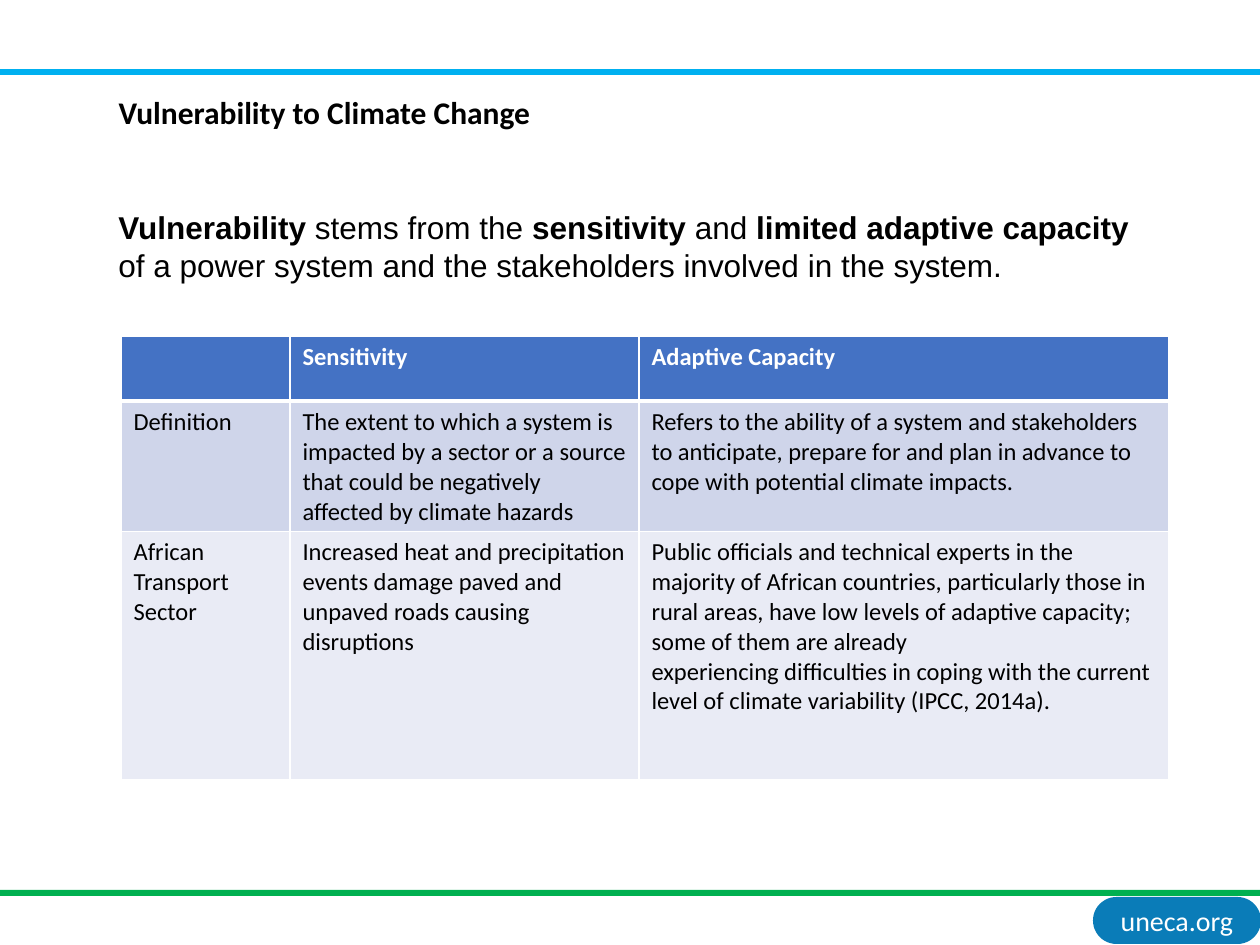
"""Build a slide on vulnerability to climate change with a definition table."""
import pptx
import pptx.util
import pptx.dml.color
import pptx.enum.shapes
import pptx.enum.text
import pptx.oxml

PX = 914400 / 126
COLORS = {
    "sky": "00B0F0", "green": "00B050", "badge": "0A7CB8", "white": "FFFFFF",
    "black": "000000", "header": "4472C4", "band_dark": "CFD5EA", "band_light": "E9EBF5",
}
ANCHOR = pptx.enum.text.MSO_ANCHOR
ALIGN = pptx.enum.text.PP_ALIGN
SHAPE = pptx.enum.shapes.MSO_SHAPE
NS = 'xmlns:a="http://schemas.openxmlformats.org/drawingml/2006/main"'


def px(*values):
    return [pptx.util.Emu(round(v * PX)) for v in values]


def add_text(p, text, color, **formats):
    r = p.add_run()
    r.text = text
    r.font.color.rgb = pptx.dml.color.RGBColor.from_string(COLORS[color])
    for name, value in formats.items():
        setattr(r.font, name, value)


prs = pptx.Presentation()
prs.slide_width, prs.slide_height = px(1260, 945)
s = prs.slides.add_slide(prs.slide_layouts[5])

bars = [
    (SHAPE.ROUNDED_RECTANGLE, (1093, 897, 168, 47), "badge"),
    (SHAPE.RECTANGLE, (0, 69, 1260, 6), "sky"),
    (SHAPE.RECTANGLE, (0, 890, 1260, 6), "green"),
]
for kind, box, color in bars:
    sp = s.shapes.add_shape(kind, *px(*box))
    sp.shadow.inherit = False
    sp.fill.solid()
    sp.fill.fore_color.rgb = pptx.dml.color.RGBColor.from_string(COLORS[color])
    sp.line.fill.background()
    if color == "badge":
        sp.adjustments[0] = 0.5
        tf = sp.text_frame
        margins = px(6)[0]
        for side in ("left", "top", "right", "bottom"):
            setattr(tf, f"margin_{side}", margins)
        tf.word_wrap = False
        tf.vertical_anchor = ANCHOR.MIDDLE
        tf.paragraphs[0].alignment = ALIGN.CENTER
        add_text(tf.paragraphs[0], "uneca.org", "white", name="Calibri", size=pptx.util.Pt(16))

title = s.shapes.title
title.left, title.top, title.width, title.height = px(106, 87, 440, 50)
tf = title.text_frame
tf_formats = {"word_wrap": False, "vertical_anchor": ANCHOR.TOP,
              "auto_size": pptx.enum.text.MSO_AUTO_SIZE.NONE}
for name, value in tf_formats.items():
    setattr(tf, name, value)
p = tf.paragraphs[0]
p.alignment = ALIGN.LEFT
add_text(p, "Vulnerability to Climate Change", "black",
         name="Calibri", size=pptx.util.Pt(18), bold=True)

tf = s.shapes.add_textbox(*px(106, 202, 1048, 89)).text_frame
tf.word_wrap = True
statement = [
    ("Vulnerability", True), (" stems from the ", False),
    ("sensitivity", True), (" and ", False),
    ("limited adaptive capacity ", True),
    ("of a power system and the stakeholders involved in the system.", False),
]
for text, bold in statement:
    add_text(tf.paragraphs[0], text, "black", name="Arial", size=pptx.util.Pt(18), bold=bold)

rows = [
    ["", "Sensitivity", "Adaptive Capacity"],
    ["Definition",
     "The extent to which a system is impacted by a sector or a source "
     "that could be negatively affected by climate hazards",
     "Refers to the ability of a system and stakeholders to anticipate, prepare for "
     "and plan in advance to cope with potential climate impacts."],
    ["African Transport Sector",
     "Increased heat and precipitation events damage paved and unpaved roads causing disruptions",
     "Public officials and technical experts in the majority of African countries, "
     "particularly those in rural areas, have low levels of adaptive capacity; "
     "some of them are already\n"
     "experiencing difficulties in coping with the current level of climate variability "
     "(IPCC, 2014a)."],
]
row_heights = px(65, 130, 248)
col_widths = px(169, 349, 530)
row_fills = ["header", "band_dark", "band_light"]
table = s.shapes.add_table(3, 3, *px(121, 336, 1048, 443)).table
for col, width in zip(table.columns, col_widths):
    col.width = width
for i, texts in enumerate(rows):
    table.rows[i].height = row_heights[i]
    for j, text in enumerate(texts):
        cell = table.cell(i, j)
        for k, line in enumerate(text.split("\n") if text else []):
            p = cell.text_frame.paragraphs[0] if k == 0 else cell.text_frame.add_paragraph()
            add_text(p, line, "black" if i else "white",
                     name="Calibri", size=pptx.util.Pt(14), bold=i == 0)
        tc_pr = cell._tc.get_or_add_tcPr()
        for side in ("L", "R", "T", "B"):
            thick = (i, side) in ((0, "B"), (1, "T"))
            width = pptx.util.Pt(3 if thick else 1)
            tc_pr.append(pptx.oxml.parse_xml(
                f'<a:ln{side} {NS} w="{width}"><a:solidFill>'
                f'<a:srgbClr val="{COLORS["white"]}"/></a:solidFill></a:ln{side}>'))
        cell.fill.solid()
        cell.fill.fore_color.rgb = pptx.dml.color.RGBColor.from_string(COLORS[row_fills[i]])

prs.save("out.pptx")
